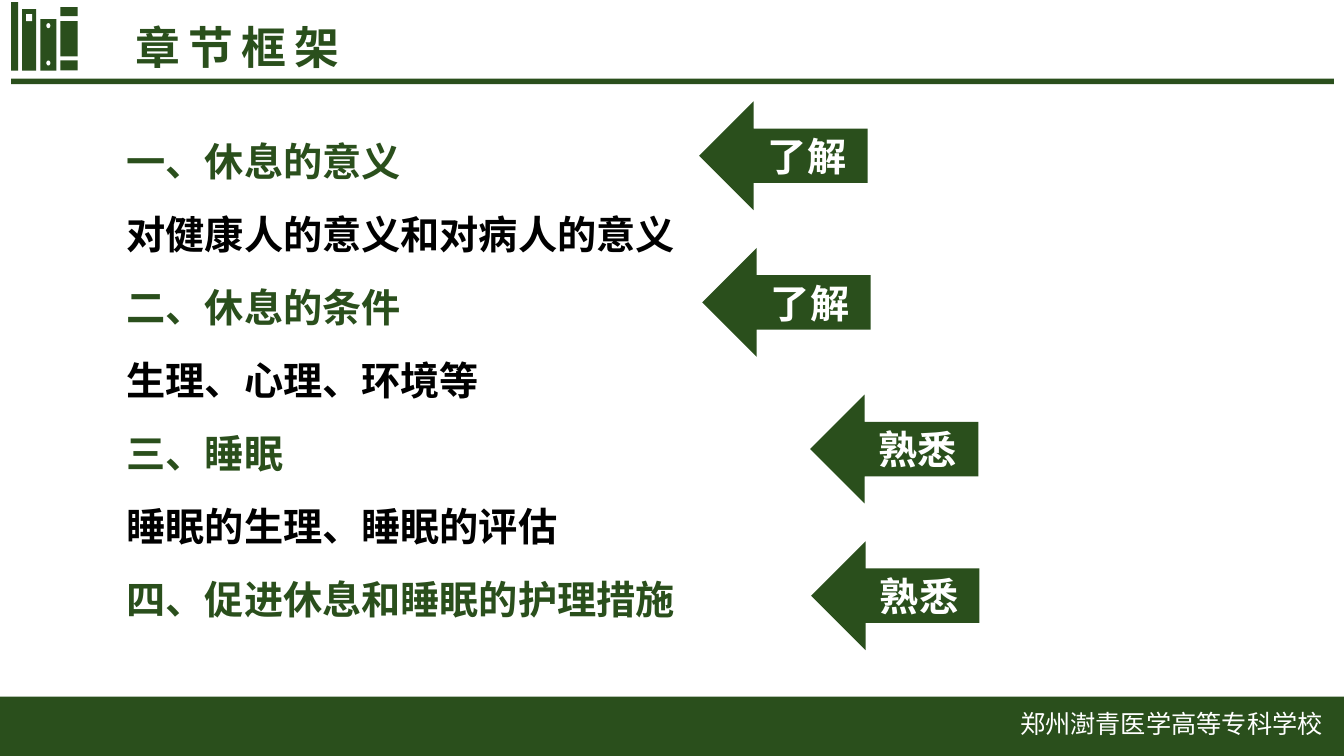
import pptx
import pptx.util
import pptx.dml.color
import pptx.enum.shapes
import pptx.enum.text
import pptx.oxml.ns
import lxml.etree

GREEN, WHITE, BLACK = "2A4F1C", "FFFFFF", "000000"
FONT = "Noto Sans CJK SC"
COLUMNS, ROWS = 133.3, 75
CELL = pptx.util.Inches(0.1)  # the slide is a grid of square cells
hex_color = pptx.dml.color.RGBColor.from_string
preset = pptx.enum.shapes.MSO_SHAPE
align = pptx.enum.text.PP_ALIGN
anchor = pptx.enum.text.MSO_ANCHOR


def add_block(kind, col, row, cols, rows, color=GREEN):
    block = slide.shapes.add_shape(kind, *(round(n * CELL) for n in (col, row, cols, rows)))
    block.shadow.inherit = False
    block.fill.solid()
    block.fill.fore_color.rgb = hex_color(color)
    block.line.fill.background()
    return block


def add_run(paragraph, text, size, color, bold=True):
    run = paragraph.add_run()
    run.text = text
    run.font.size = pptx.util.Pt(size)
    run.font.bold = bold
    run.font.name = FONT
    run.font.color.rgb = hex_color(color)
    properties = run.font._element
    east_asian = lxml.etree.SubElement(properties, pptx.oxml.ns.qn("a:ea"))
    east_asian.set("typeface", FONT)
    return properties


deck = pptx.Presentation()
deck.slide_width = round(COLUMNS * CELL)
deck.slide_height = ROWS * CELL
slide = deck.slides.add_slide(deck.slide_layouts[1])

# Header rule and footer band
add_block(preset.RECTANGLE, 1.1, 7.8, 131.2, 0.55)
add_block(preset.RECTANGLE, 0, 69.1, COLUMNS, 5.9)

# Books icon: spines first, then their labels and holes
for col, row, cols, rows in [
    (1.1, 0.2, 0.7, 6.8),
    (2.2, 0.9, 1.4, 6.1),
    (4, 1.9, 1.6, 5.1),
    (6, 0.7, 1.7, 0.9),
    (6, 2.1, 1.7, 3.5),
    (6, 6, 1.7, 1),
]:
    add_block(preset.RECTANGLE, col, row, cols, rows)
add_block(preset.RECTANGLE, 2.6, 1.4, 0.6, 0.7, WHITE)
for hole_row in (2.3, 6):
    add_block(preset.OVAL, 4.6, hole_row, 0.4, 0.5, WHITE)

# Title and outline placeholders
heading = slide.shapes.title
outline = slide.placeholders[1]
for holder, area in [(heading, (12.4, 2, 36.2, 4.8)), (outline, (11.55, 11.9, 96.4, 40.5))]:
    holder.left, holder.top, holder.width, holder.height = (round(n * CELL) for n in area)
    holder.text_frame.auto_size = pptx.enum.text.MSO_AUTO_SIZE.NONE
    holder.text_frame.vertical_anchor = anchor.TOP
    holder.text_frame.word_wrap = True

heading.text_frame.margin_top = heading.text_frame.margin_bottom = 0
heading_line = heading.text_frame.paragraphs[0]
heading_line.alignment = align.LEFT
heading_line.line_spacing = 1.0
add_run(heading_line, "章节框架", 32, GREEN).set("spc", "600")

# Outline: section names in green, their contents in black
topics = [
    ("一、休息的意义", GREEN),
    ("对健康人的意义和对病人的意义", BLACK),
    ("二、休息的条件", GREEN),
    ("生理、心理、环境等", BLACK),
    ("三、睡眠", GREEN),
    ("睡眠的生理、睡眠的评估", BLACK),
    ("四、促进休息和睡眠的护理措施", GREEN),
]
for index, (topic, color) in enumerate(topics):
    frame = outline.text_frame
    line = frame.add_paragraph() if index else frame.paragraphs[0]
    settings = line._p.get_or_add_pPr()
    settings.set("marL", "0")
    settings.set("indent", "0")
    lxml.etree.SubElement(settings, pptx.oxml.ns.qn("a:buNone"))
    line.alignment = align.LEFT
    line.line_spacing = pptx.util.Pt(42.2)
    line.space_before = pptx.util.Pt(10 if index else 0)
    add_run(line, topic, 28, color)

# Arrows, each with a label for the required level of its section
levels = [("了解", 69.35), ("了解", 69.65), ("熟悉", 80.35), ("熟悉", 80.45)]
for index, (level, col) in enumerate(levels):
    row = 10.05 + 14.55 * index
    add_block(preset.LEFT_ARROW, col, row, 16.7, 10.8)
    label = add_block(preset.ROUNDED_RECTANGLE, col + 4.95, row + 3.45, 11.5, 3.9).text_frame
    label.word_wrap = True
    label.vertical_anchor = anchor.MIDDLE
    label.margin_top = label.margin_bottom = 0
    label.paragraphs[0].alignment = align.CENTER
    add_run(label.paragraphs[0], level, 28, WHITE)

# School name in the footer
school = slide.shapes.add_textbox(*(round(n * CELL) for n in (100.2, 69.8, 32.3, 4)))
school.text_frame.word_wrap = True
add_run(school.text_frame.paragraphs[0], "郑州澍青医学高等专科学校", 18, WHITE, bold=False)

deck.save("out.pptx")
